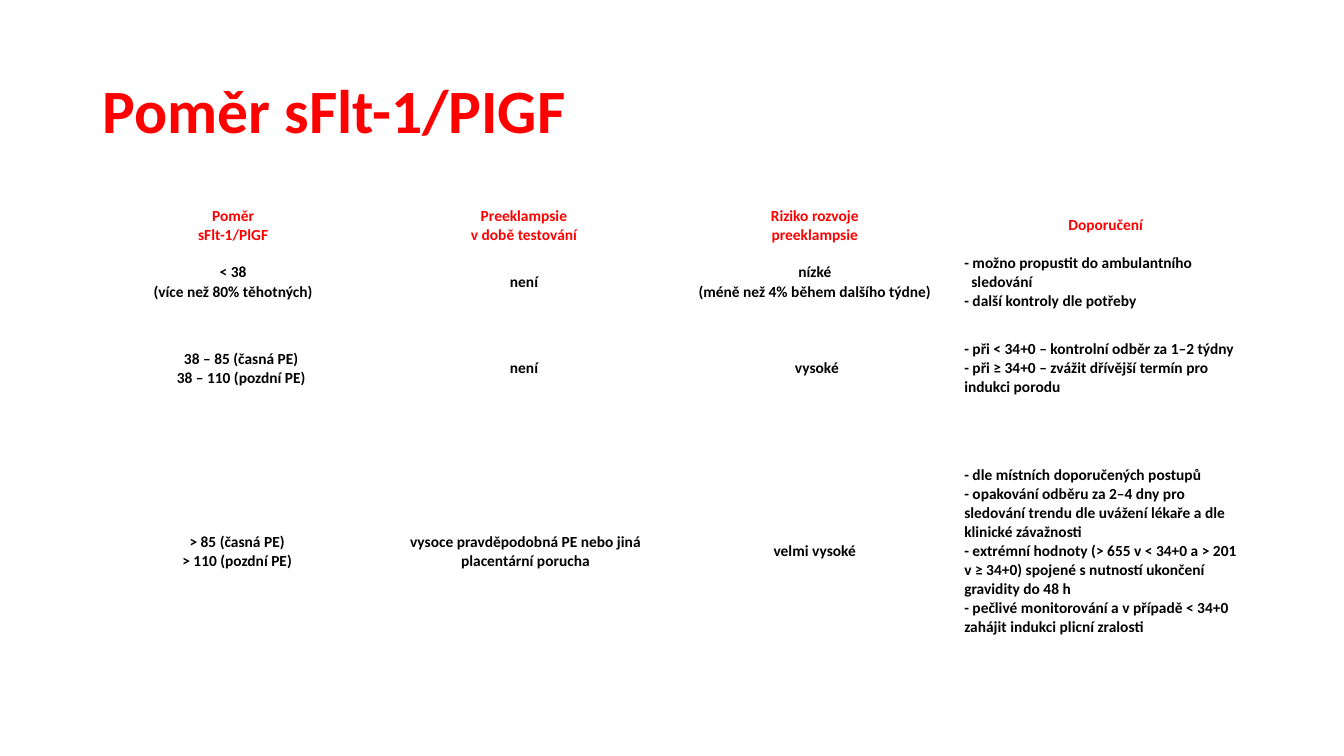
"""Build the slide on the sFlt-1/PIGF ratio with its table of advice."""
from dataclasses import dataclass

from pptx import Presentation
from pptx import util as u
from pptx.dml.color import RGBColor
from pptx.enum import text

RED = RGBColor(0xFF, 0x00, 0x00)
BLACK = RGBColor(0x00, 0x00, 0x00)
MID = text.PP_ALIGN.CENTER
LEFT = text.PP_ALIGN.LEFT
FONT = "Calibri"
TITLE_SIZE = 44
CELL_SIZE = 11
PAD = 0.04


@dataclass(frozen=True)
class Entry:
    lines: tuple[str, ...]
    align: text.PP_ALIGN = MID
    shift: float = 0
    hang: float = 0


@dataclass(frozen=True)
class Row:
    height: float
    color: RGBColor
    ratio: Entry
    state: Entry
    risk: Entry
    advice: Entry

    def cells(self) -> tuple[Entry, ...]:
        return self.ratio, self.state, self.risk, self.advice


ROWS = (
    Row(
        height=0.47,
        color=RED,
        ratio=Entry(("Poměr", "sFlt-1/PlGF")),
        state=Entry(("Preeklampsie", "v době testování")),
        risk=Entry(("Riziko rozvoje", "preeklampsie")),
        advice=Entry(("Doporučení",)),
    ),
    Row(
        height=0.66,
        color=BLACK,
        ratio=Entry(("< 38", "(více než 80% těhotných)")),
        state=Entry(("není",)),
        risk=Entry(("nízké", "(méně než 4% během dalšího týdne)")),
        advice=Entry((
            "- možno propustit do ambulantního sledování",
            "- další kontroly dle potřeby",
        ), LEFT, hang=0.07),
    ),
    Row(
        height=1.05,
        color=BLACK,
        ratio=Entry(("38 – 85 (časná PE)", "38 – 110 (pozdní PE)"), shift=0.16),
        state=Entry(("není",)),
        risk=Entry(("vysoké",), shift=0.04),
        advice=Entry((
            "- při < 34+0 – kontrolní odběr za 1–2 týdny",
            "- při ≥ 34+0 – zvážit dřívější termín pro indukci porodu",
        ), LEFT),
    ),
    Row(
        height=2.58,
        color=BLACK,
        ratio=Entry(("> 85 (časná PE)", "> 110 (pozdní PE)"), shift=0.08),
        state=Entry(("vysoce pravděpodobná PE nebo jiná placentární porucha",),
                    shift=0.03),
        risk=Entry(("velmi vysoké",)),
        advice=Entry((
            "- dle místních doporučených postupů",
            "- opakování odběru za 2–4 dny pro sledování trendu dle uvážení "
            "lékaře a dle klinické závažnosti",
            "- extrémní hodnoty (> 655 v < 34+0 a > 201 v ≥ 34+0) spojené "
            "s nutností ukončení gravidity do 48 h",
            "- pečlivé monitorování a v případě < 34+0 zahájit indukci "
            "plicní zralosti",
        ), LEFT),
    ),
)


def style(item: object, values: dict) -> None:
    for name, value in values.items():
        setattr(item, name, value)


def write(para, line: str, size: int, color: RGBColor) -> None:
    run = para.add_run()
    run.text = line
    style(run.font, {"name": FONT, "size": u.Pt(size), "bold": True})
    run.font.color.rgb = color


def indent(para, hang: float) -> None:
    props = para._p.get_or_add_pPr()
    props.set("marL", str(u.Inches(hang)))
    props.set("indent", str(u.Inches(-hang)))


def fill_cell(cell, entry: Entry, color: RGBColor) -> None:
    cell.fill.background()
    style(cell, {
        "vertical_anchor": text.MSO_ANCHOR.MIDDLE,
        "margin_left": u.Inches(PAD + entry.shift),
        "margin_right": u.Inches(PAD),
        "margin_top": u.Inches(PAD),
        "margin_bottom": u.Inches(PAD),
    })
    frame = cell.text_frame
    for i, line in enumerate(entry.lines):
        para = frame.add_paragraph() if i else frame.paragraphs[0]
        para.alignment = entry.align
        if entry.hang:
            indent(para, entry.hang)
        write(para, line, CELL_SIZE, color)


def add_title(slide) -> None:
    title = slide.shapes.title
    style(title, {
        "left": u.Inches(0.92), "top": u.Inches(0.4),
        "width": u.Inches(11.5), "height": u.Inches(1.45),
    })
    style(title.text_frame, {
        "vertical_anchor": text.MSO_ANCHOR.MIDDLE,
        "auto_size": text.MSO_AUTO_SIZE.NONE,
        "word_wrap": True,
    })
    para = title.text_frame.paragraphs[0]
    style(para, {"alignment": LEFT, "line_spacing": 0.9})
    write(para, "Poměr sFlt-1/PIGF", TITLE_SIZE, RED)


def add_grid(slide) -> None:
    height = sum(row.height for row in ROWS)
    grid = slide.shapes.add_table(
        len(ROWS), len(ROWS[0].cells()), u.Inches(0.87), u.Inches(2),
        u.Inches(11.54), u.Inches(height)).table
    style(grid, {"first_row": False, "horz_banding": False})
    for line, row in zip(grid.rows, ROWS):
        line.height = u.Inches(row.height)
        for cell, entry in zip(line.cells, row.cells()):
            fill_cell(cell, entry, row.color)


def main() -> None:
    deck = Presentation()
    style(deck, {"slide_width": u.Inches(13.33), "slide_height": u.Inches(7.5)})
    slide = deck.slides.add_slide(deck.slide_layouts[5])
    add_title(slide)
    add_grid(slide)
    deck.save("out.pptx")


if __name__ == "__main__":
    main()
